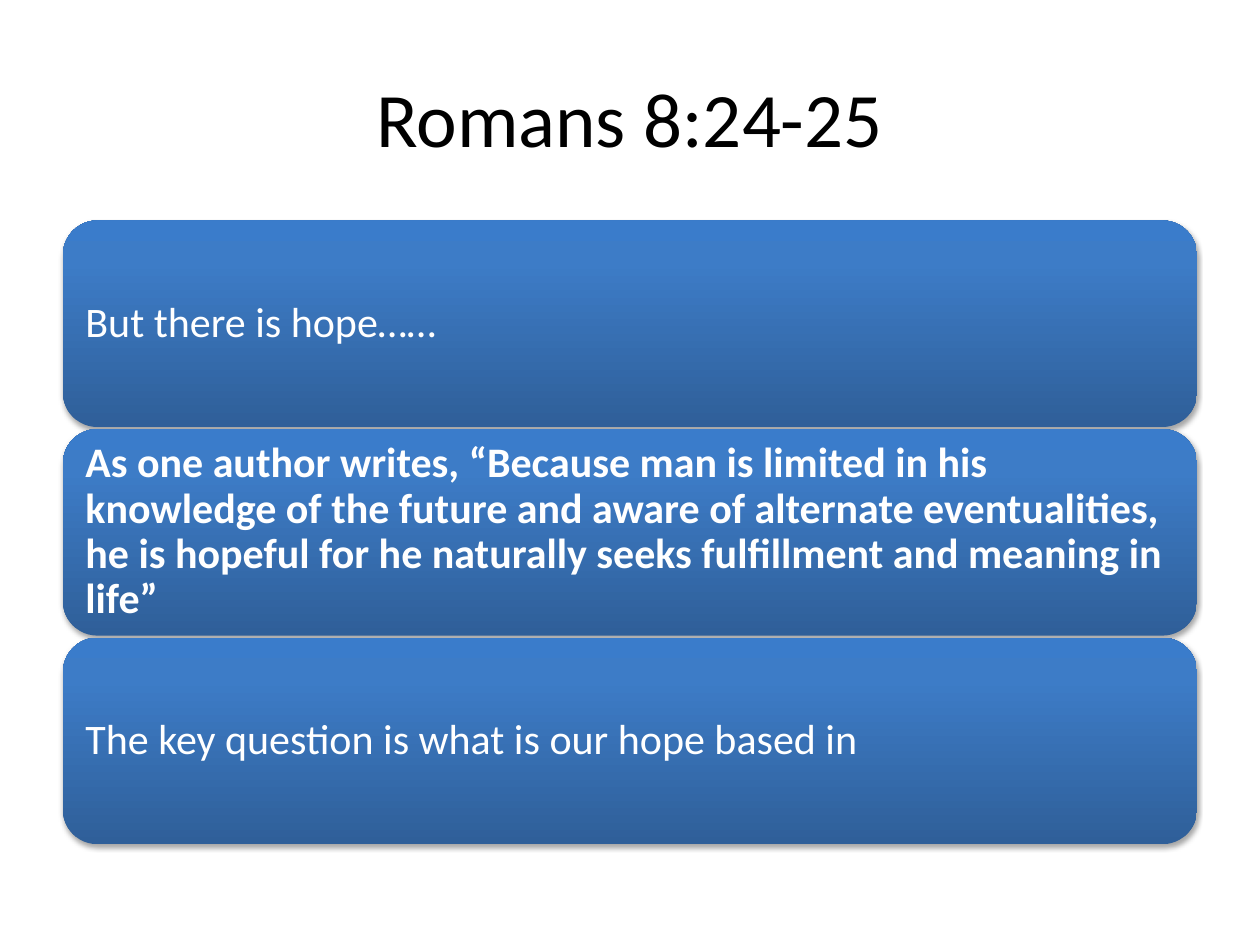
from copy import deepcopy

from lxml.etree import SubElement
from pptx import Presentation
from pptx.dml.color import RGBColor
from pptx.enum.shapes import MSO_SHAPE as SHAPE
from pptx.enum.text import MSO_ANCHOR as ANCHOR, PP_ALIGN as ALIGN
from pptx.oxml.ns import qn
from pptx.util import Pt

BLACK = RGBColor(0x00, 0x00, 0x00)
WHITE = RGBColor(0xFF, 0xFF, 0xFF)
GRADIENT = [
    (0, RGBColor(0x2F, 0x5F, 0x99)),
    (0.8, RGBColor(0x3D, 0x7C, 0xC7)),
    (1, RGBColor(0x3A, 0x7C, 0xCB)),
]
LEFT, WIDTH = 36, 648
TOP, HEIGHT, PITCH = 126, 118, 119.2
POINTS = [
    ("But there is hope……", False),
    ("As one author writes, “Because man is limited in his knowledge of the "
     "future and aware of alternate eventualities, he is hopeful for he "
     "naturally seeks fulfillment and meaning in life”", True),
    ("The key question is what is our hope based in", False),
]


class Deck:
    font = "Calibri"
    title_size = 44
    body_size = 24
    inset = 7.2

    def __init__(self, slide):
        self.slide = slide

    def add_text(self, sp, text, size, color, align, bold=False):
        tf = sp.text_frame
        tf.word_wrap = True
        tf.vertical_anchor = ANCHOR.MIDDLE
        p = tf.paragraphs[0]
        p.alignment = align
        r = p.add_run()
        r.text = text
        r.font.name = self.font
        r.font.size = Pt(size)
        r.font.bold = bold
        r.font.color.rgb = color
        return tf

    def title(self, text, x, y, w, h):
        sp = self.slide.shapes.add_textbox(Pt(x), Pt(y), Pt(w), Pt(h))
        self.add_text(sp, text, self.title_size, BLACK, ALIGN.CENTER)

    def panel(self, text, bold, x, y, w, h):
        sp = self.slide.shapes.add_shape(
            SHAPE.ROUNDED_RECTANGLE, Pt(x), Pt(y), Pt(w), Pt(h))
        sp.line.fill.background()
        self.shade(sp)
        self.shadow(sp)
        tf = self.add_text(sp, text, self.body_size, WHITE, ALIGN.LEFT, bold)
        tf.margin_left = tf.margin_right = Pt(self.inset)
        tf.margin_top = tf.margin_bottom = Pt(self.inset)
        tf.paragraphs[0].line_spacing = 0.9

    def shade(self, sp):
        sp.fill.gradient()
        sp.fill.gradient_angle = 90
        stops = sp._element.spPr.find(".//" + qn("a:gsLst"))
        stops.append(deepcopy(stops[-1]))
        for stop, (position, color) in zip(sp.fill.gradient_stops, GRADIENT):
            stop.position = position
            stop.color.rgb = color

    def shadow(self, sp):
        sp.shadow.inherit = False
        effects = sp._element.spPr.find(qn("a:effectLst"))
        outer = SubElement(
            effects, qn("a:outerShdw"), blurRad=str(Pt(3.1)),
            dist=str(Pt(1.8)), dir="5400000", rotWithShape="0")
        color = SubElement(outer, qn("a:srgbClr"), val=str(BLACK))
        SubElement(color, qn("a:alpha"), val="35000")


def main():
    prs = Presentation()
    prs.slide_width, prs.slide_height = Pt(720), Pt(540)
    deck = Deck(prs.slides.add_slide(prs.slide_layouts[6]))
    deck.title("Romans 8:24-25", LEFT, 21.6, WIDTH, 90)
    for i, (text, bold) in enumerate(POINTS):
        deck.panel(text, bold, LEFT, TOP + i * PITCH, WIDTH, HEIGHT)
    prs.save("out.pptx")


if __name__ == "__main__":
    main()
